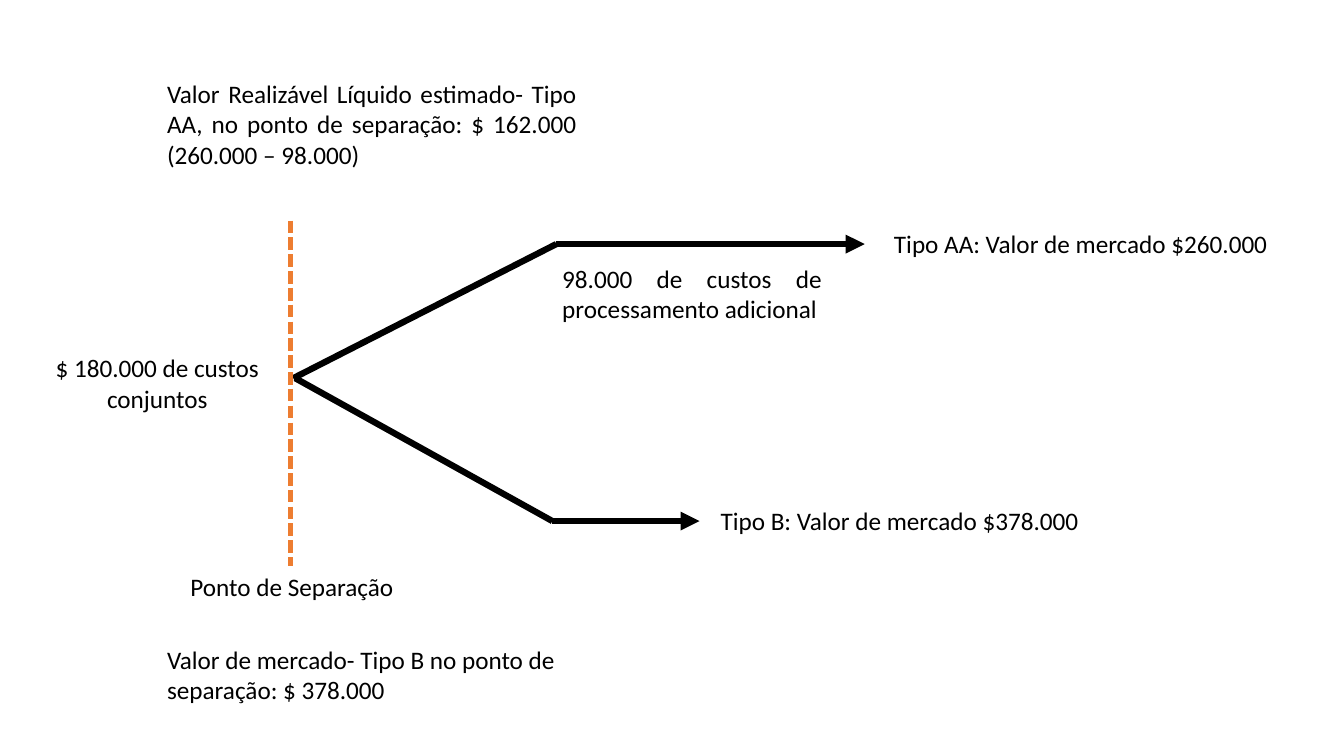
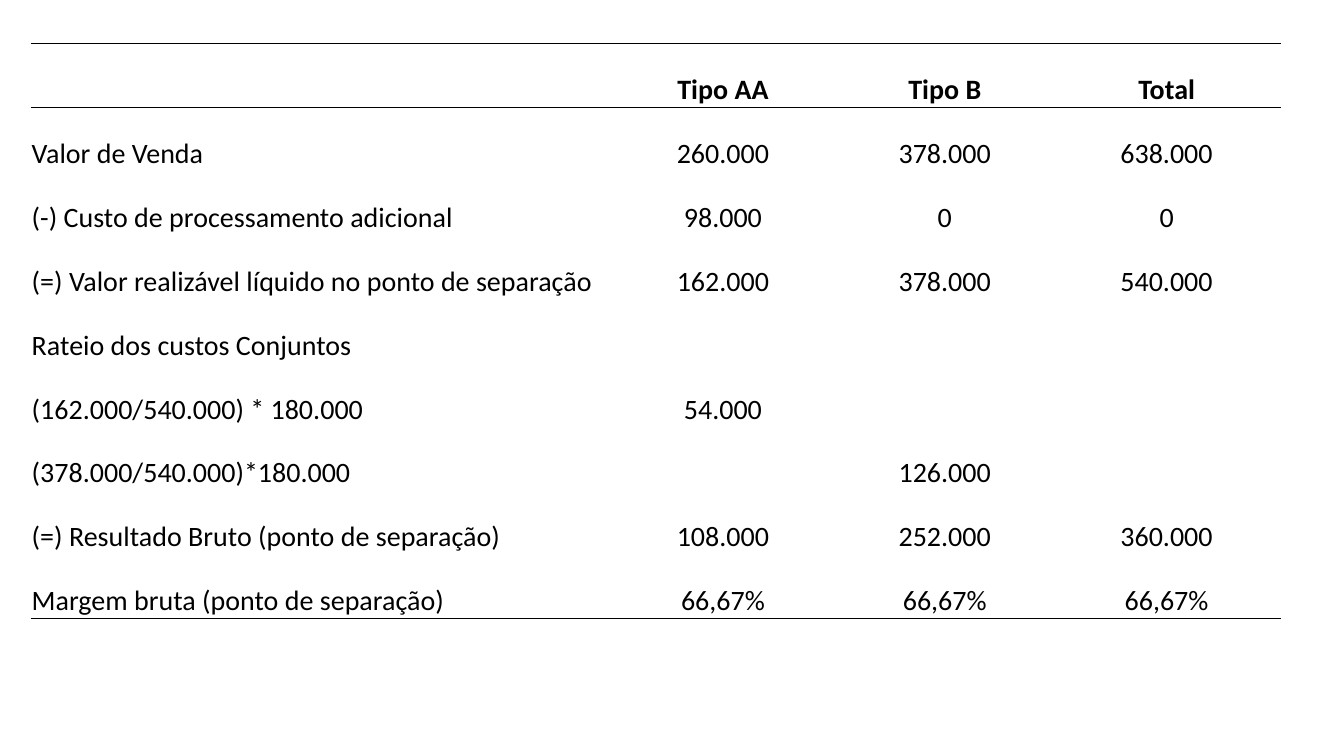
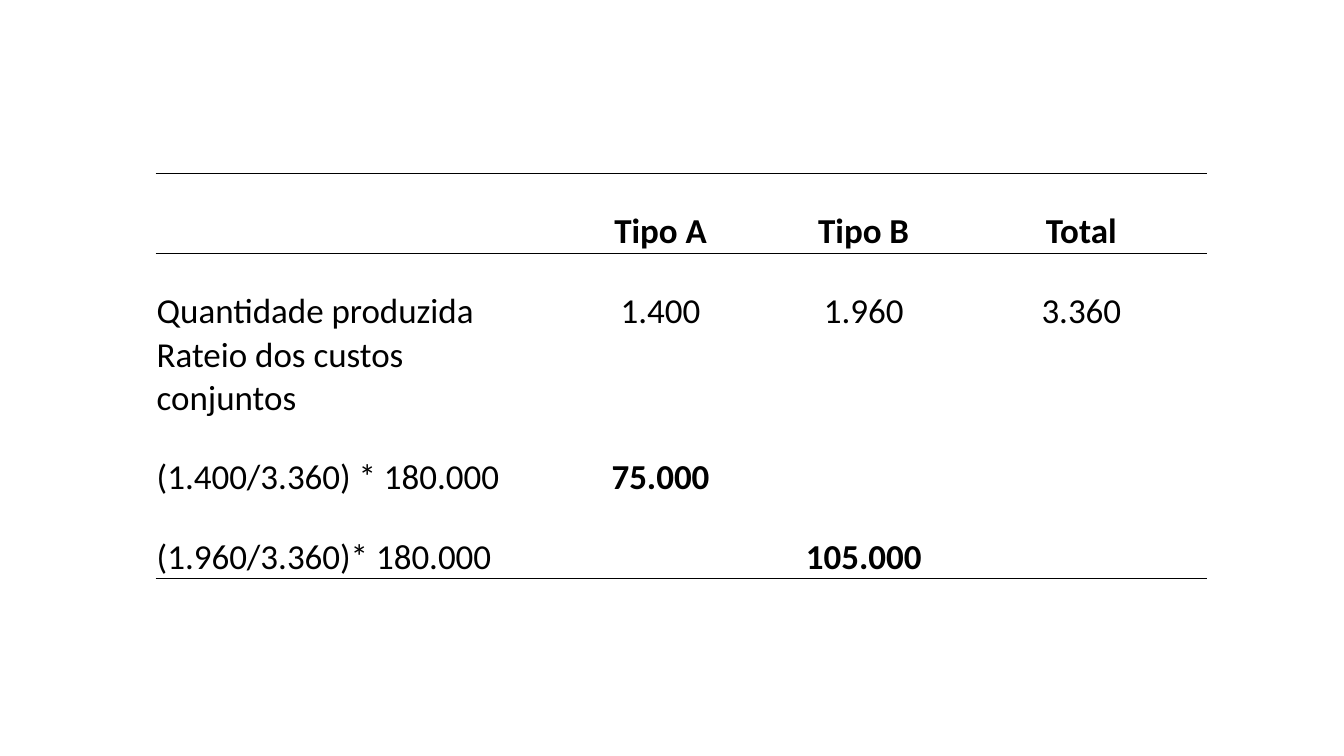
from lxml import etree
from pptx import Presentation
from pptx import util as u
from pptx.dml.color import RGBColor
from pptx.enum import dml, shapes, text
from pptx.oxml import ns

BLACK = RGBColor(0x00, 0x00, 0x00)
ORANGE = RGBColor(0xED, 0x7D, 0x31)
FONT = "Calibri"
NO_GRID_STYLE = "{2D5ABB26-0587-4C30-8999-92F81FD0307C}"
ALIGN = text.PP_ALIGN


class Deck:
    def __init__(self):
        self.presentation = Presentation()
        self.presentation.slide_width = u.Cm(33.87)
        self.presentation.slide_height = u.Cm(19.05)
        self.slide = None

    def add_slide(self):
        layout = self.presentation.slide_layouts[6]
        self.slide = self.presentation.slides.add_slide(layout)

    def set_text(self, text_frame, content, size, align, bold=False):
        text_frame.text = content
        paragraph = text_frame.paragraphs[0]
        paragraph.alignment = align
        for run in paragraph.runs:
            run.font.name = FONT
            run.font.size = u.Pt(size)
            run.font.bold = bold
            run.font.color.rgb = BLACK

    def label(self, content, left, top, width, lines=1, align=ALIGN.LEFT):
        height = 0.25 + 0.77 * lines
        shape = self.slide.shapes.add_textbox(
            u.Cm(left), u.Cm(top), u.Cm(width), u.Cm(height))
        shape.text_frame.word_wrap = True
        shape.text_frame.auto_size = text.MSO_AUTO_SIZE.SHAPE_TO_FIT_TEXT
        self.set_text(shape.text_frame, content, 18, align)

    def line(self, start, end, color=BLACK, width=4.5, dash=None, arrow=False):
        connector = self.slide.shapes.add_connector(
            shapes.MSO_CONNECTOR.STRAIGHT, *map(u.Cm, start + end))
        connector.line.color.rgb = color
        connector.line.width = u.Pt(width)
        if dash:
            connector.line.dash_style = dash
        properties = connector.element.spPr
        if arrow:
            outline = properties.find(ns.qn("a:ln"))
            etree.SubElement(outline, ns.qn("a:tailEnd"), type="triangle")
        etree.SubElement(properties, ns.qn("a:effectLst"))

    def border(self, cell_properties, side):
        outline = etree.SubElement(
            cell_properties, ns.qn(f"a:{side}"), w=str(u.Pt(1)))
        fill = etree.SubElement(outline, ns.qn("a:solidFill"))
        etree.SubElement(fill, ns.qn("a:srgbClr"), val=str(BLACK))

    def table(self, rows, left, top, widths, row_height, size, highlights=()):
        frame = self.slide.shapes.add_table(
            len(rows), len(widths), u.Cm(left), u.Cm(top),
            u.Cm(sum(widths)), u.Cm(row_height * len(rows)))
        for style in frame.element.iter(ns.qn("a:tableStyleId")):
            style.text = NO_GRID_STYLE
        table = frame.table
        table.first_row = table.horz_banding = False
        for column, width in zip(table.columns, widths):
            column.width = u.Cm(width)
        for row_index, values in enumerate(rows):
            table.rows[row_index].height = u.Cm(row_height)
            for column_index, value in enumerate(values):
                cell = table.cell(row_index, column_index)
                cell.vertical_anchor = text.MSO_ANCHOR.BOTTOM
                cell.margin_left = cell.margin_right = u.Cm(0.03)
                cell.margin_top, cell.margin_bottom = u.Cm(0.03), 0
                if value:
                    align = ALIGN.CENTER if column_index else ALIGN.LEFT
                    bold = row_index == 0 or value in highlights
                    self.set_text(cell.text_frame, value, size, align, bold)
                cell_properties = cell._tc.get_or_add_tcPr()
                if row_index == 0:
                    self.border(cell_properties, "lnT")
                if row_index in (0, len(rows) - 1):
                    self.border(cell_properties, "lnB")
                cell.fill.background()


def add_split_diagram(deck):
    deck.add_slide()
    upper_y, split_y, lower_y = 6.15, 9.53, 13.13
    upper_bend, lower_bend = (14.02, upper_y), (13.92, lower_y)
    deck.line((7.44, split_y), lower_bend)
    deck.line((7.39, split_y), upper_bend)
    deck.line(upper_bend, (21.79, upper_y), arrow=True)
    deck.line(lower_bend, (17.63, lower_y), arrow=True)
    deck.label("Tipo AA: Valor de mercado $260.000", 22.28, upper_y - 0.51, 9.98)
    deck.label("Tipo B: Valor de mercado $378.000", 17.91, lower_y - 0.51, 9.98)
    deck.label("98.000 de custos de processamento adicional",
               13.92, 6.5, 7.04, 2, ALIGN.JUSTIFY)
    deck.label("$ 180.000 de custos conjuntos", 0.94, 8.76, 6.05, 2, ALIGN.CENTER)
    deck.line((7.32, 5.56), (7.32, 14.27), ORANGE, 3,
              dml.MSO_LINE.SQUARE_DOT)
    deck.label("Ponto de Separação", 4.55, 14.27, 5.79)
    deck.label("Valor Realizável Líquido estimado- Tipo AA, no ponto de "
               "separação: $ 162.000 (260.000 – 98.000)",
               3.96, 1.85, 10.82, 3, ALIGN.JUSTIFY)
    deck.label("Valor de mercado- Tipo B no ponto de separação: $ 378.000",
               3.96, 16.1, 10.82, 2)


def add_realizable_value_table(deck):
    deck.add_slide()
    rows = [
        ("", "Tipo AA", "Tipo B", "Total"),
        ("Valor de Venda", "260.000", "378.000", "638.000"),
        ("(-) Custo de processamento adicional", "98.000", "0", "0"),
        ("(=) Valor realizável líquido no ponto de separação",
         "162.000", "378.000", "540.000"),
        ("Rateio dos custos Conjuntos", "", "", ""),
        ("(162.000/540.000) * 180.000", "54.000", "", ""),
        ("(378.000/540.000)*180.000", "", "126.000", ""),
        ("(=) Resultado Bruto (ponto de separação)",
         "108.000", "252.000", "360.000"),
        ("Margem bruta (ponto de separação)", "66,67%", "66,67%", "66,67%"),
    ]
    deck.table(rows, 0.77, 1.09, (14.58, 5.74, 5.44, 5.74), 1.61, 20)


def add_quantity_table(deck):
    deck.add_slide()
    rows = [
        ("", "Tipo A", "Tipo B", "Total"),
        ("Quantidade produzida", "1.400", "1.960", "3.360"),
        ("Rateio dos custos conjuntos", "", "", ""),
        ("(1.400/3.360) * 180.000", "75.000", "", ""),
        ("(1.960/3.360)* 180.000", "", "105.000", ""),
    ]
    deck.table(rows, 3.92, 4.37, (9.93, 5.59, 4.65, 6.32), 2.01, 25,
               highlights=("75.000", "105.000"))


def main():
    deck = Deck()
    add_split_diagram(deck)
    add_realizable_value_table(deck)
    add_quantity_table(deck)
    deck.presentation.save("out.pptx")


if __name__ == "__main__":
    main()
